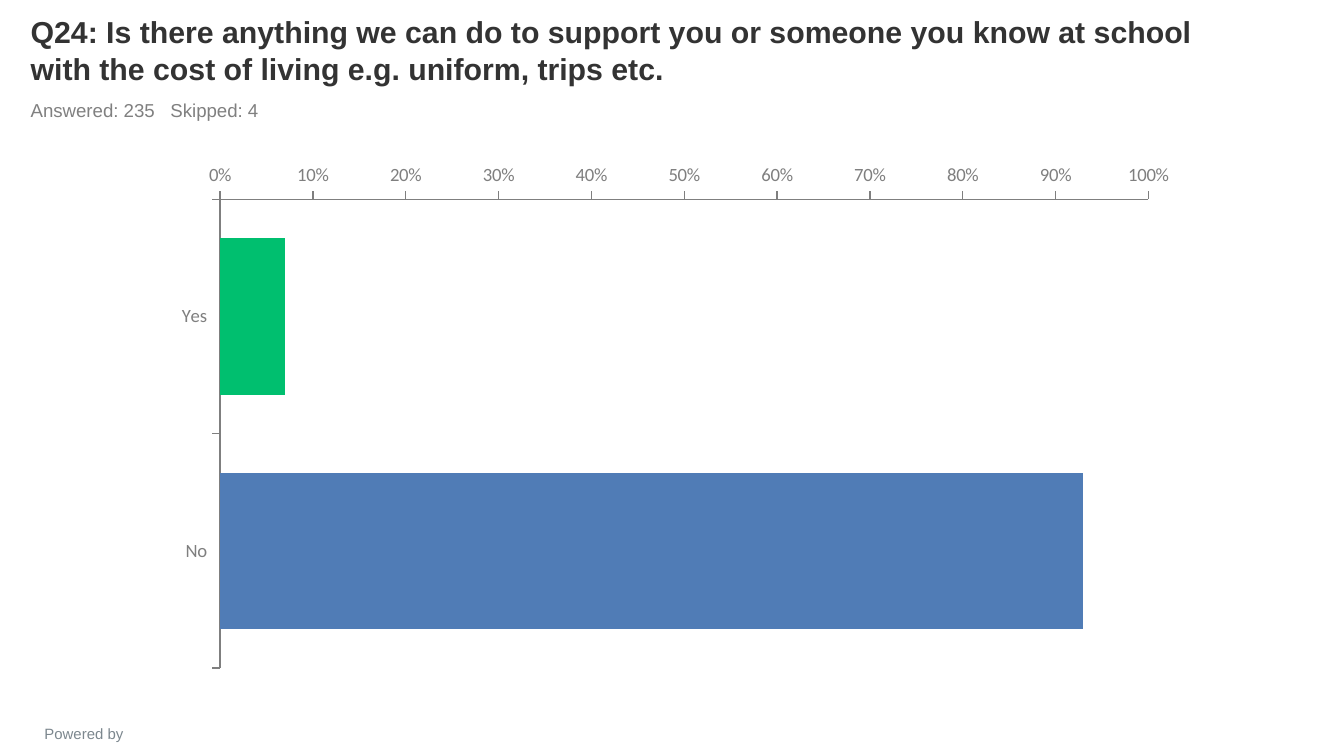
from dataclasses import dataclass

from lxml import etree
from pptx import Presentation
from pptx.chart.data import CategoryChartData
from pptx.dml.color import RGBColor
from pptx.enum.chart import XL_CHART_TYPE, XL_TICK_LABEL_POSITION, XL_TICK_MARK
from pptx.enum.text import MSO_ANCHOR, PP_ALIGN
from pptx.oxml.ns import qn
from pptx.util import Inches, Pt

BAR_CLUSTERED = XL_CHART_TYPE.BAR_CLUSTERED
LABELS_LOW = XL_TICK_LABEL_POSITION.LOW
TICK_OUTSIDE, TICK_NONE = XL_TICK_MARK.OUTSIDE, XL_TICK_MARK.NONE
TOP, BOTTOM = MSO_ANCHOR.TOP, MSO_ANCHOR.BOTTOM
LEFT, CENTER = PP_ALIGN.LEFT, PP_ALIGN.CENTER

DARK = RGBColor(0x33, 0x33, 0x33)
GREY = RGBColor(0x80, 0x80, 0x80)
AXIS_GREY = RGBColor(0x7F, 0x7F, 0x7F)
SLATE = RGBColor(0x7C, 0x87, 0x8E)
GREEN = RGBColor(0x00, 0xBF, 0x6F)
BLUE = RGBColor(0x50, 0x7C, 0xB6)


@dataclass(frozen=True)
class Area:
    left: float
    top: float
    width: float
    height: float

    def lengths(self) -> tuple:
        return tuple(Inches(n) for n in (self.left, self.top, self.width, self.height))


@dataclass(frozen=True)
class Answer:
    label: str
    share: float
    color: RGBColor


ANSWERS = [Answer("Yes", 0.07, GREEN), Answer("No", 0.93, BLUE)]


def add_text(page, area: Area, text: str, *, size: float, color: RGBColor,
             bold: bool = False, align=LEFT, anchor=TOP, tab: float = 0) -> None:
    """Add a text box; tab is the place of a tab stop in inches, if any."""
    frame = page.shapes.add_textbox(*area.lengths()).text_frame
    frame.word_wrap = True
    frame.vertical_anchor = anchor
    para = frame.paragraphs[0]
    para.text = text
    para.alignment = align
    if tab:
        stops = etree.SubElement(para._p.get_or_add_pPr(), qn("a:tabLst"))
        etree.SubElement(stops, qn("a:tab"), pos=str(Inches(tab)), algn="l")
    font = para.font
    font.name, font.size, font.bold = "Arial", Pt(size), bold
    font.color.rgb = color


def style_axis(axis) -> None:
    axis.has_major_gridlines = False
    axis.major_tick_mark, axis.minor_tick_mark = TICK_OUTSIDE, TICK_NONE
    axis.format.line.color.rgb = AXIS_GREY
    axis.format.line.width = Pt(0.75)
    font = axis.tick_labels.font
    font.name, font.size = "Calibri", Pt(10)
    font.color.rgb = AXIS_GREY


def add_answer_chart(page, area: Area, answers: list[Answer]) -> None:
    """Add a bar chart with the first answer on top and the shares below."""
    data = CategoryChartData(number_format="0%")
    data.categories = [answer.label for answer in answers]
    data.add_series("Series 1", [answer.share for answer in answers])
    chart = page.shapes.add_chart(BAR_CLUSTERED, *area.lengths(), data).chart
    chart.has_legend = chart.has_title = False
    chart.font.name, chart.font.size = "Calibri", Pt(18)
    chart.font.color.rgb = DARK

    plot = chart.plots[0]
    plot.gap_width, plot.overlap, plot.vary_by_categories = 50, 100, False
    series = plot.series[0]
    series.format.fill.solid()
    series.format.fill.fore_color.rgb = GREEN
    for index, answer in enumerate(answers):
        fill = series.points[index].format.fill
        fill.solid()
        fill.fore_color.rgb = answer.color

    labels, shares = chart.category_axis, chart.value_axis
    for axis in (labels, shares):
        style_axis(axis)
    labels.reverse_order = True
    labels.crosses_at = len(answers) + 1
    labels.tick_label_position = LABELS_LOW
    shares.minimum_scale, shares.maximum_scale, shares.major_unit = 0, 1, 0.1
    shares.tick_labels.number_format = "0%"
    shares.tick_labels.number_format_is_linked = False


def main() -> None:
    deck = Presentation()
    deck.slide_width = Inches(10)
    deck.slide_height = deck.slide_width * 9 // 16
    page = deck.slides.add_slide(deck.slide_layouts[6])
    add_text(page, Area(0.05, 5.34, 1.15, 0.18), "Powered by",
             size=8, color=SLATE, align=CENTER)
    add_text(page, Area(0.13, 0.09, 9, 0.6),
             "Q24: Is there anything we can do to support you or someone you know "
             "at school with the cost of living e.g. uniform, trips etc.",
             size=16.2, color=DARK, bold=True, anchor=BOTTOM)
    add_text(page, Area(0.13, 0.69, 9, 0.26), "Answered: 235\tSkipped: 4",
             size=10, color=GREY, tab=1.04)
    add_answer_chart(page, Area(1.2, 1.15, 7.65, 3.9), ANSWERS)
    deck.save("out.pptx")


if __name__ == "__main__":
    main()
